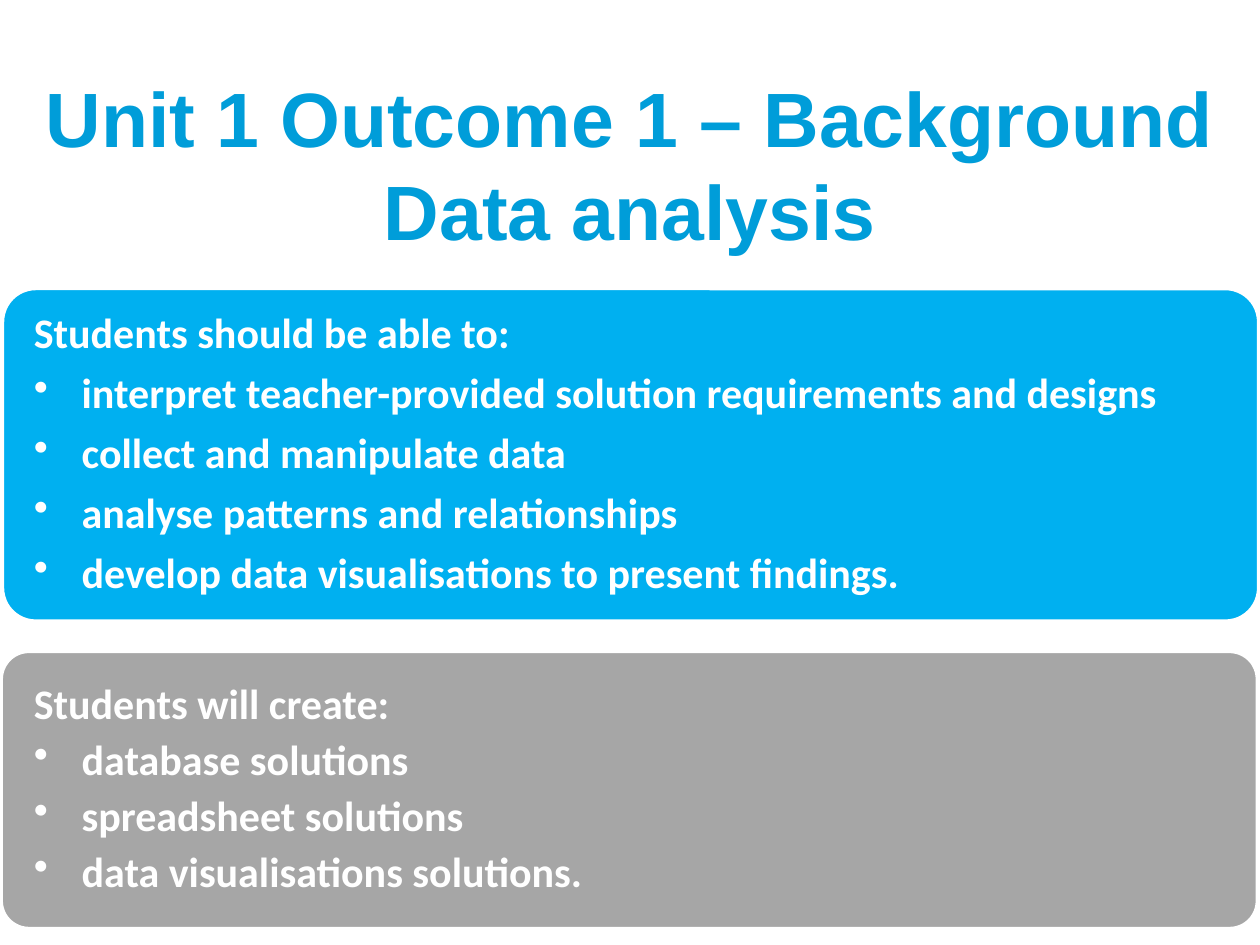
from pptx import Presentation
from pptx.dml.color import RGBColor
from pptx.enum.shapes import MSO_SHAPE
from pptx.enum.text import MSO_ANCHOR, MSO_AUTO_SIZE, PP_ALIGN
from pptx.util import Inches, Pt
from lxml import etree

ROUNDED, RECTANGLE = MSO_SHAPE.ROUNDED_RECTANGLE, MSO_SHAPE.RECTANGLE
MIDDLE = MSO_ANCHOR.MIDDLE
LEFT, CENTER = PP_ALIGN.LEFT, PP_ALIGN.CENTER
NO_AUTOFIT = MSO_AUTO_SIZE.NONE
DRAWING = "{http://schemas.openxmlformats.org/drawingml/2006/main}"

TITLE = "Unit 1 Outcome 1 – Background\vData analysis"
PANELS = [
    {
        "heading": "Students should be able to:",
        "bullets": [
            "interpret teacher-provided solution requirements and designs",
            "collect and manipulate data",
            "analyse patterns and relationships",
            "develop data visualisations to present findings.",
        ],
        "left": 0.02, "top": 2.29, "height": 2.64, "color": "00B0F0", "gap": 8.4,
    },
    {
        "heading": "Students will create:",
        "bullets": [
            "database solutions",
            "spreadsheet solutions",
            "data visualisations solutions.",
        ],
        "left": 0.01, "top": 5.17, "height": 2.2, "color": "A6A6A6", "gap": 6,
    },
]
PANEL_WIDTH = 9.97
CORNER = 0.1
TEXT_LEFT, TEXT_WIDTH = 0.17, 9.66
INDENT = Inches(0.38)


def rgb(value):
    return RGBColor.from_string(value)


def style_font(paragraph, name, size, color):
    font = paragraph.font
    font.name, font.size, font.bold = name, Pt(size), True
    font.color.rgb = rgb(color)


def add_block(slide, kind, left, top, width, height, color):
    block = slide.shapes.add_shape(
        kind, Inches(left), Inches(top), Inches(width), Inches(height))
    block.shadow.inherit = False
    block.fill.solid()
    block.fill.fore_color.rgb = rgb(color)
    return block


def add_bullet(paragraph):
    properties = paragraph._p.get_or_add_pPr()
    properties.set("marL", str(INDENT))
    properties.set("indent", str(-INDENT))
    etree.SubElement(properties, DRAWING + "buChar", char="•")


def add_panel(slide, panel):
    top, height, color = panel["top"], panel["height"], panel["color"]
    card = add_block(slide, ROUNDED, panel["left"], top, PANEL_WIDTH, height, color)
    card.adjustments[0] = CORNER
    card.line.color.rgb = rgb("FFFFFF")
    card.line.width = Pt(2)

    inset = CORNER * height * 0.29
    box = add_block(slide, RECTANGLE, TEXT_LEFT, top + inset,
                    TEXT_WIDTH, height - 2 * inset, color)
    box.line.fill.background()
    frame = box.text_frame
    frame.word_wrap = True
    frame.vertical_anchor = MIDDLE
    frame.margin_left = frame.margin_right = Inches(0.1)
    frame.margin_top = frame.margin_bottom = Inches(0.1)
    frame.text = "\n".join([panel["heading"], *panel["bullets"]])
    for index, paragraph in enumerate(frame.paragraphs):
        paragraph.alignment = LEFT
        paragraph.line_spacing = 0.9
        paragraph.space_after = Pt(panel["gap"])
        if index:
            add_bullet(paragraph)
        style_font(paragraph, "Calibri", 24, "FFFFFF")


def add_title(slide):
    title = slide.shapes.title
    title.left, title.top = Inches(0), Inches(0.67)
    title.width, title.height = Inches(10), Inches(1.25)
    frame = title.text_frame
    frame.text = TITLE
    frame.word_wrap = True
    frame.auto_size = NO_AUTOFIT
    frame.vertical_anchor = MIDDLE
    paragraph = frame.paragraphs[0]
    paragraph.alignment = CENTER
    style_font(paragraph, "Arial", 44, "009DD9")


def main():
    deck = Presentation()
    deck.slide_width, deck.slide_height = Inches(10), Inches(7.5)
    slide = deck.slides.add_slide(deck.slide_layouts[5])
    add_title(slide)
    for panel in PANELS:
        add_panel(slide, panel)
    deck.save("out.pptx")


if __name__ == "__main__":
    main()
